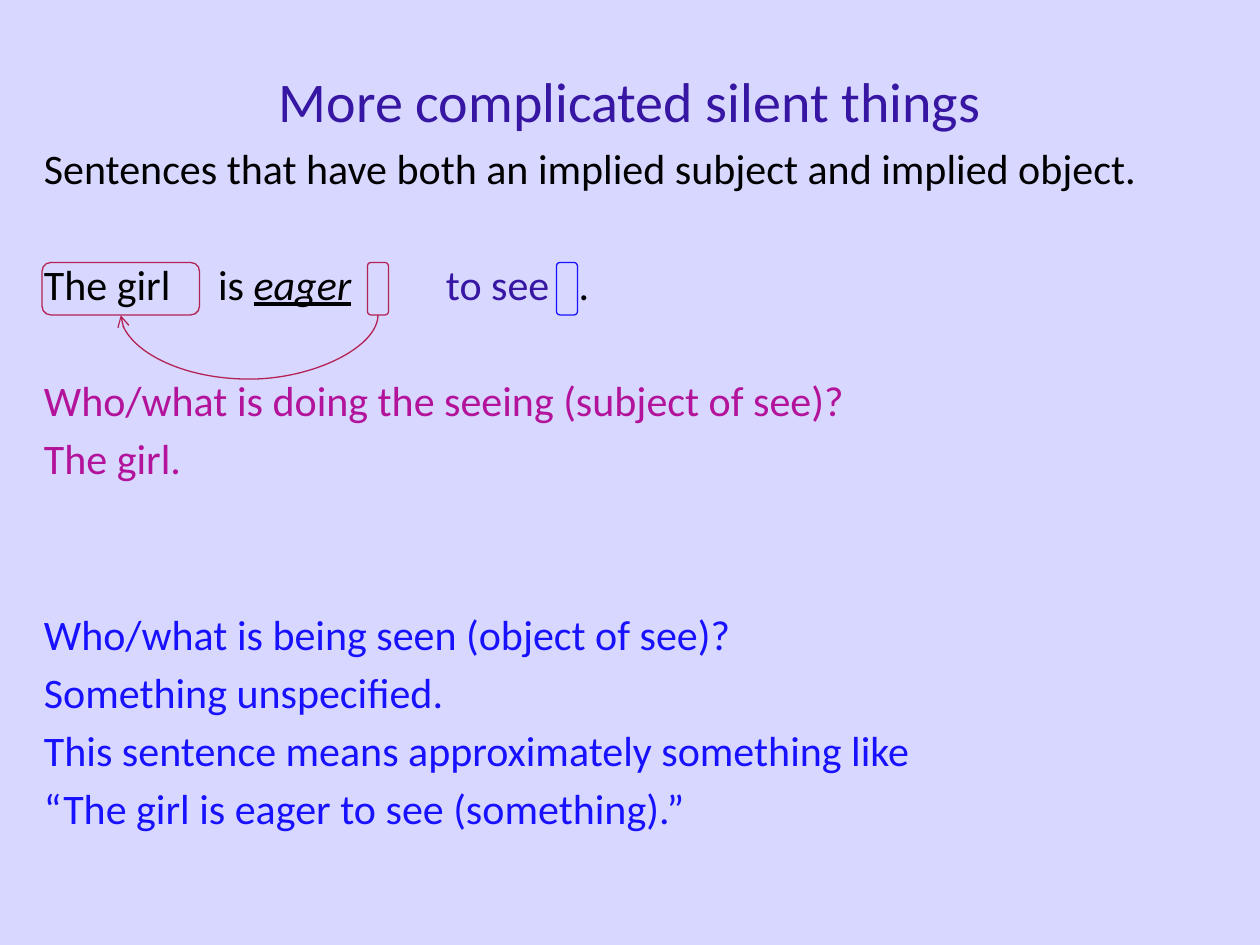
from dataclasses import dataclass

from lxml.etree import SubElement
from pptx import Presentation
from pptx.dml.color import RGBColor
from pptx.enum.shapes import MSO_CONNECTOR, MSO_SHAPE
from pptx.enum.text import MSO_ANCHOR, PP_ALIGN
from pptx.oxml.ns import qn
from pptx.util import Pt


@dataclass(frozen=True)
class Theme:
    font: str = "Calibri"
    title_size: float = 32
    body_size: float = 24
    line_gap: float = 4.3
    line_pitch: float = 33.6
    stroke: float = 0.75
    background: str = "D7D7FF"
    ink: str = "000000"
    violet: str = "3616A2"
    magenta: str = "B3129A"
    blue: str = "1711FF"
    crimson: str = "B52254"


THEME = Theme()
BOTTOM = 2  # connection site at the bottom centre of a box


def rgb(color):
    return RGBColor.from_string(color)


def add_text(p, text, color=THEME.ink, size=THEME.body_size,
             italic=False, underline=False):
    r = p.add_run()
    r.text = text
    r.font.name = THEME.font
    r.font.size = Pt(size)
    r.font.color.rgb = rgb(color)
    r.font.italic = italic
    r.font.underline = underline


def place(sp, left, top, width, height):
    sp.left, sp.top, sp.width, sp.height = map(Pt, (left, top, width, height))


def add_title(s, text):
    sp = s.shapes.title
    place(sp, 54, 12, 612, 90)
    tf = sp.text_frame
    tf.vertical_anchor = MSO_ANCHOR.MIDDLE
    p = tf.paragraphs[0]
    p.alignment = PP_ALIGN.CENTER
    add_text(p, text, color=THEME.violet, size=THEME.title_size)


def add_text_box(s, left, top, width, height):
    tf = s.shapes.add_textbox(Pt(left), Pt(top), Pt(width), Pt(height)).text_frame
    tf.word_wrap = True
    return tf


def add_line(tf, text, color, skipped=0):
    """Add a paragraph, leaving room above it for the skipped lines."""
    p = tf.add_paragraph()
    p.space_before = Pt(THEME.line_gap + skipped * THEME.line_pitch)
    add_text(p, text, color=color)


def set_tabs(p, *stops):
    tabs = SubElement(p._p.get_or_add_pPr(), qn("a:tabLst"))
    for stop in stops:
        SubElement(tabs, qn("a:tab"), pos=str(Pt(stop)), algn="l")


def add_example(p):
    """Write the example sentence with gaps for its silent parts."""
    set_tabs(p, 99.5, 229.7, 305.5)
    add_text(p, "The girl\tis ")
    add_text(p, "eager", italic=True, underline=True)
    add_text(p, "\t")
    add_text(p, "to see", color=THEME.violet)
    add_text(p, "\t.")


def add_outline(s, left, width, color):
    sp = s.shapes.add_shape(MSO_SHAPE.ROUNDED_RECTANGLE,
                            Pt(left), Pt(150), Pt(width), Pt(30))
    sp.shadow.inherit = False
    sp.fill.background()
    sp.line.color.rgb = rgb(color)
    sp.line.width = Pt(THEME.stroke)
    return sp


def add_curved_arrow(s, source, target, depth, color):
    """Loop below two boxes, from the bottom of source to that of target."""
    start = source.left + source.width // 2
    end = target.left + target.width // 2
    base = source.top + source.height
    sp = s.shapes.add_connector(MSO_CONNECTOR.CURVE, start, base, end, base)
    sp.begin_connect(source, BOTTOM)
    sp.end_connect(target, BOTTOM)

    # A quarter turn makes the thin connector bulge downwards.
    span, thickness = start - end, Pt(0.25)
    sp.left, sp.top = (start + end - thickness) // 2, base - span // 2
    sp.width, sp.height = thickness, span
    spPr = sp._element.spPr
    xfrm = spPr.find(qn("a:xfrm"))
    xfrm.set("rot", str(90 * 60000))
    for flip in ("flipH", "flipV"):
        xfrm.attrib.pop(flip, None)
    guides = spPr.find(qn("a:prstGeom")).get_or_add_avLst()
    bulge = round(Pt(depth) / thickness * 100000)
    SubElement(guides, qn("a:gd"), name="adj1", fmla=f"val {bulge}")

    sp.line.color.rgb = rgb(color)
    sp.line.width = Pt(THEME.stroke)
    SubElement(spPr.find(qn("a:ln")), qn("a:tailEnd"), type="arrow")
    SubElement(spPr, qn("a:effectLst"))


def main():
    prs = Presentation()
    prs.slide_width, prs.slide_height = Pt(720), Pt(540)
    s = prs.slides.add_slide(prs.slide_layouts[5])
    s.background.fill.solid()
    s.background.fill.fore_color.rgb = rgb(THEME.background)

    add_title(s, "More complicated silent things")
    intro = add_text_box(s, 18, 78, 702, 132)
    add_text(intro.paragraphs[0],
             "Sentences that have both an implied subject and implied object.")

    tf = add_text_box(s, 18, 144, 702, 294)
    add_example(tf.paragraphs[0])
    add_line(tf, "Who/what is doing the seeing (subject of see)?",
             THEME.magenta, skipped=1)
    add_line(tf, "The girl.", THEME.magenta)
    add_line(tf, "Who/what is being seen (object of see)?", THEME.blue, skipped=2)
    for text in ("Something unspecified.",
                 "This sentence means approximately something like",
                 "“The girl is eager to see (something).”"):
        add_line(tf, text, THEME.blue)

    girl = add_outline(s, 24, 90, THEME.crimson)
    silent_subject = add_outline(s, 210, 12, THEME.crimson)
    add_curved_arrow(s, silent_subject, girl, 36, THEME.crimson)
    add_outline(s, 318, 12, THEME.blue)

    prs.save("out.pptx")


if __name__ == "__main__":
    main()
